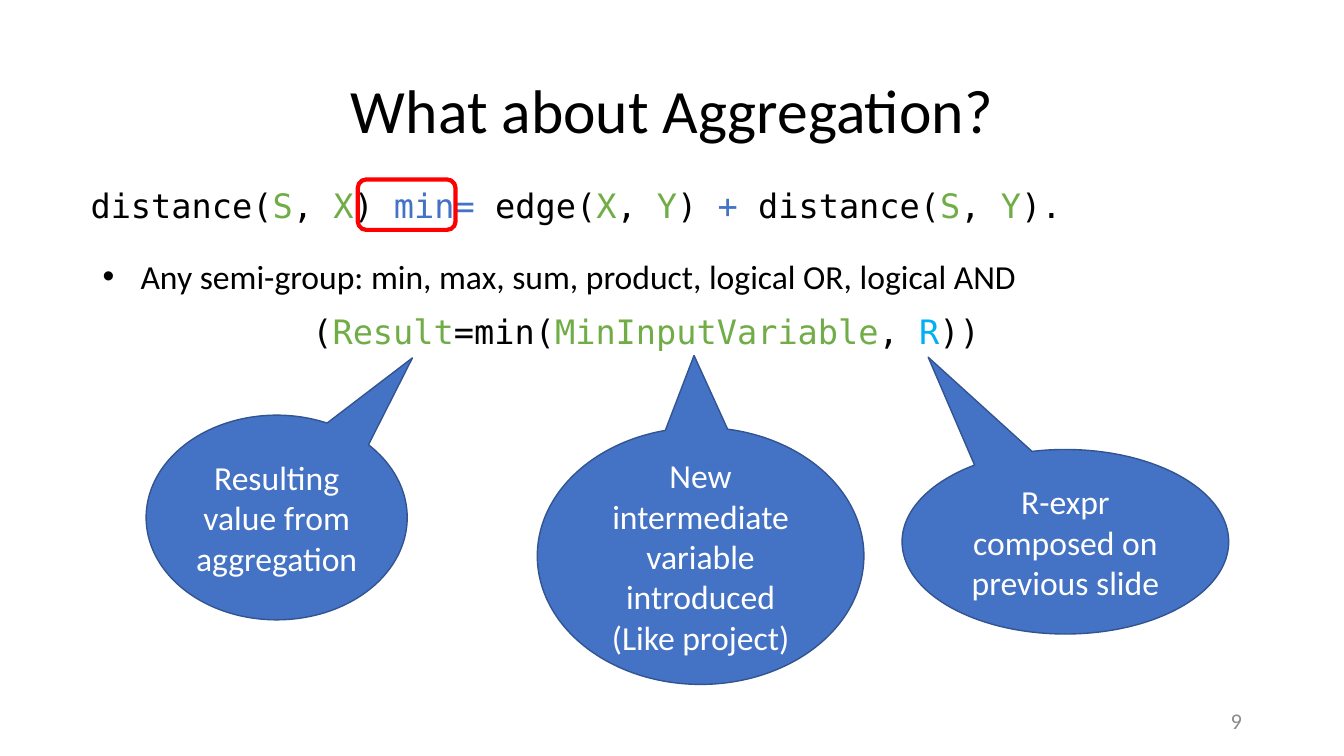
from dataclasses import dataclass

import pptx
import pptx.dml.color
import pptx.enum.shapes
import pptx.enum.text
import pptx.util

Pt = pptx.util.Pt
Align = pptx.enum.text.PP_ALIGN
Anchor = pptx.enum.text.MSO_ANCHOR
Fit = pptx.enum.text.MSO_AUTO_SIZE
Kind = pptx.enum.shapes.MSO_SHAPE

SANS, MONO = "Calibri", "DejaVu Sans Mono"
BLACK, WHITE, GREY, RED = "000000", "FFFFFF", "8C8C8C", "FF0000"
BLUE, NAVY, GREEN, CYAN = "4472C4", "325491", "70AD47", "00B0F0"

Box = tuple[float, float, float, float]


@dataclass
class Code:
    box: Box
    spans: list[tuple[str, str]]


@dataclass
class Bubble:
    box: Box
    tip: tuple[float, float]
    text: str


CODES = [
    Code((57.6, 128.2, 728.6, 36), [
        ("distance(", BLACK), ("S", GREEN), (", ", BLACK), ("X", GREEN),
        (") ", BLACK), ("min= ", BLUE), ("edge(", BLACK), ("X", GREEN),
        (", ", BLACK), ("Y", GREEN), (") ", BLACK), ("+", BLUE),
        (" distance(", BLACK), ("S", GREEN), (", ", BLACK), ("Y", GREEN),
        (").", BLACK)]),
    Code((216, 218.9, 618.5, 36), [
        ("(", BLACK), ("Result", GREEN), ("=min(", BLACK),
        ("MinInputVariable", GREEN), (", ", BLACK), ("R", CYAN),
        ("))", BLACK)]),
]

BUBBLES = [
    Bubble((644.4, 321.1, 233.3, 131.8), (-0.42, -1),
           "R-expr composed on previous slide"),
    Bubble((383.8, 305.3, 233.3, 183.6), (-0.02, -0.78),
           "New intermediate variable introduced\n(Like project)"),
    Bubble((104.4, 296.6, 186.5, 146.2), (0.52, -0.78),
           "Resulting value from aggregation"),
]


def color(code: str) -> pptx.dml.color.RGBColor:
    return pptx.dml.color.RGBColor.from_string(code)


def place(shape, box: Box) -> None:
    shape.left, shape.top, shape.width, shape.height = map(Pt, box)


def style(run, size: float, hue: str, face: str = SANS) -> None:
    run.font.size = Pt(size)
    run.font.name = face
    run.font.color.rgb = color(hue)


def write(shape, text: str, size: float, hue: str, align: Align,
          anchor: Anchor = Anchor.MIDDLE) -> None:
    frame = shape.text_frame
    frame.text = text
    frame.word_wrap = True
    frame.auto_size = Fit.NONE
    frame.vertical_anchor = anchor
    for para in frame.paragraphs:
        para.alignment = align
        for run in para.runs:
            style(run, size, hue)


def outline(shape, hue: str, width: float) -> None:
    shape.shadow.inherit = False
    shape.line.color.rgb = color(hue)
    shape.line.width = Pt(width)


def draw_code(slide, code: Code) -> None:
    frame = slide.shapes.add_textbox(*map(Pt, code.box)).text_frame
    frame.word_wrap = True
    frame.auto_size = Fit.SHAPE_TO_FIT_TEXT
    for text, hue in code.spans:
        run = frame.paragraphs[0].add_run()
        run.text = text
        style(run, 24, hue, MONO)


def draw_bubble(slide, item: Bubble) -> None:
    shape = slide.shapes.add_shape(Kind.OVAL_CALLOUT, *map(Pt, item.box))
    for i, value in enumerate(item.tip):
        shape.adjustments[i] = value
    shape.fill.solid()
    shape.fill.fore_color.rgb = color(BLUE)
    outline(shape, NAVY, 1)
    write(shape, item.text, 24, WHITE, Align.CENTER)


def draw_list(shape) -> None:
    place(shape, (66.2, 179.3, 769, 36))
    write(shape,
          "Any semi-group: min, max, sum, product, logical OR, logical AND",
          24, BLACK, Align.LEFT, Anchor.TOP)
    para = shape.text_frame.paragraphs[0]
    para.space_before = Pt(0)
    props = para._p.get_or_add_pPr()
    props.set("marL", str(int(Pt(27))))
    props.set("indent", str(int(Pt(-27))))


def main() -> None:
    deck = pptx.Presentation()
    deck.slide_width, deck.slide_height = Pt(960), Pt(540)
    slide = deck.slides.add_slide(deck.slide_layouts[1])

    title = slide.shapes.title
    place(title, (66.2, 28.8, 828, 104.4))
    write(title, "What about Aggregation?", 44, BLACK, Align.CENTER)
    title.text_frame.paragraphs[0].line_spacing = 0.9
    draw_list(slide.placeholders[1])

    page = slide.shapes.add_textbox(*map(Pt, (678.2, 500.4, 216, 28.8)))
    write(page, "9", 16, GREY, Align.RIGHT)

    for code in CODES:
        draw_code(slide, code)

    frame = slide.shapes.add_shape(
        Kind.ROUNDED_RECTANGLE, *map(Pt, (255.6, 128.2, 69.8, 36)))
    frame.fill.background()
    outline(frame, RED, 3)

    for item in BUBBLES:
        draw_bubble(slide, item)

    deck.save("out.pptx")


if __name__ == "__main__":
    main()
